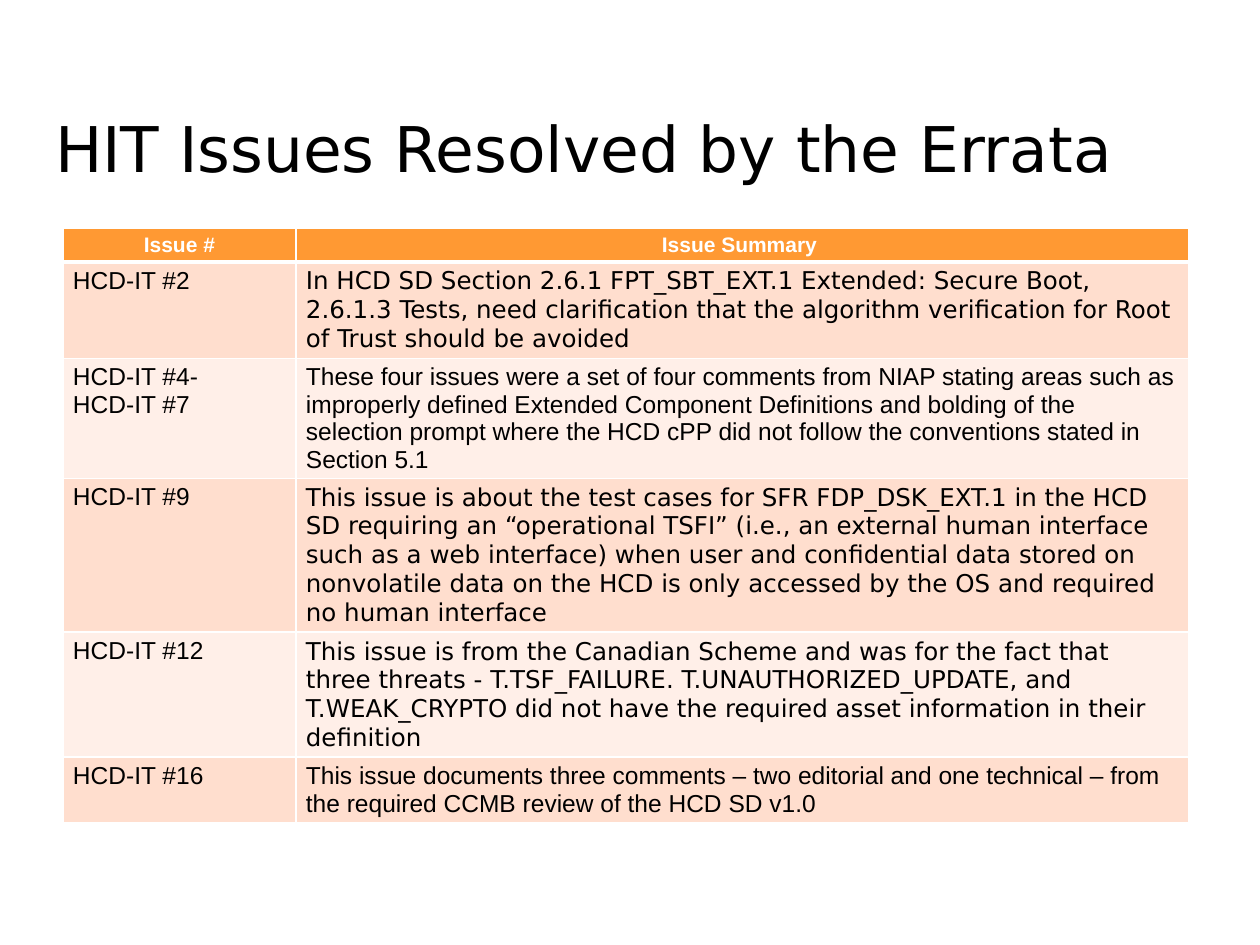
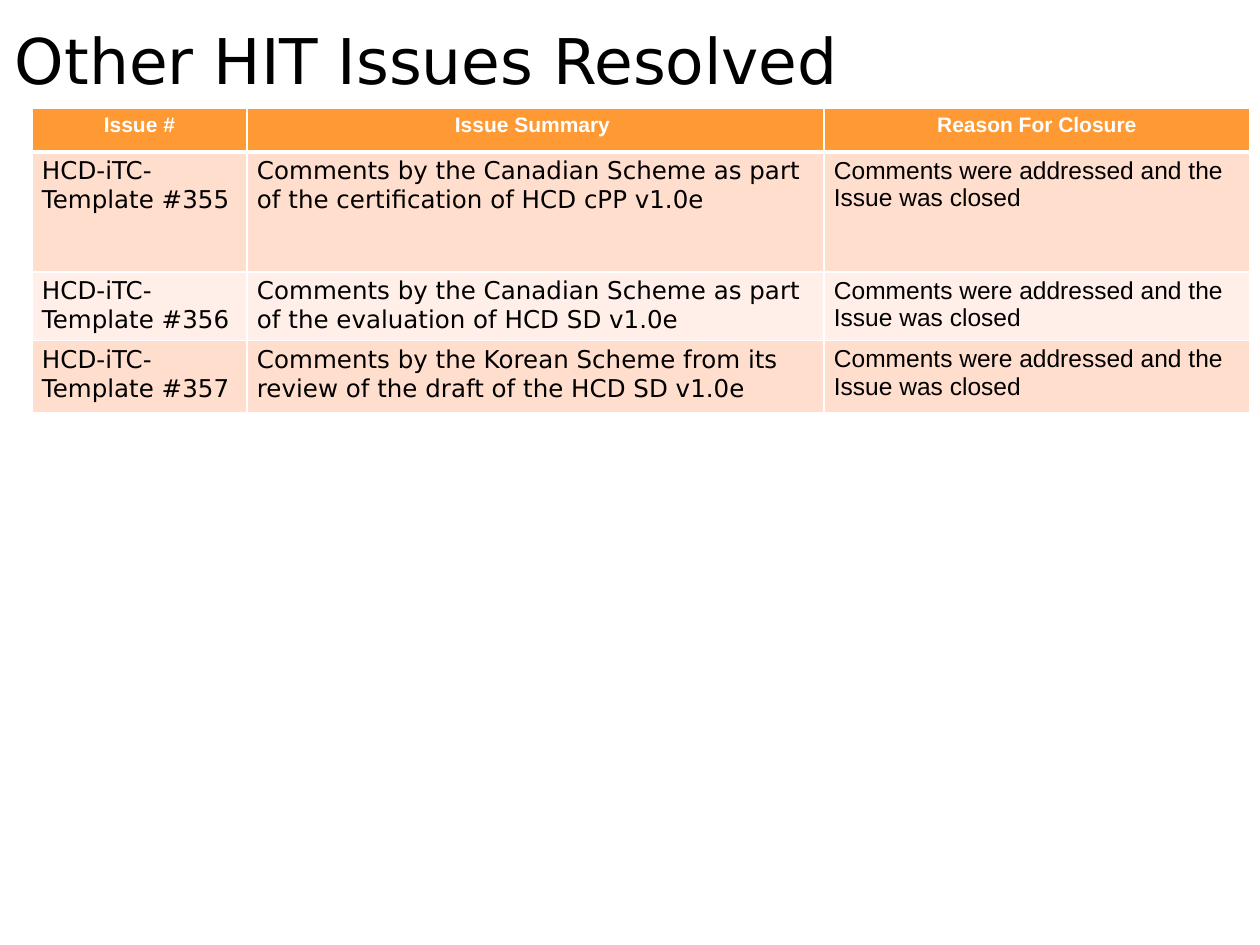
import pptx
import pptx.dml.color
import pptx.enum.text
import pptx.oxml.ns
import pptx.util
from lxml import etree

PX = 914400 // 126  # one px in EMU
SANS, ARIAL = "DejaVu Sans", "Arial"
BLACK, WHITE = "000000", "FFFFFF"
HEADER, BANDS = "FF9933", ("FFDECE", "FFEFE8")


def px(n):
    return pptx.util.Emu(n * PX)


def color(hex_text):
    return pptx.dml.color.RGBColor.from_string(hex_text)


def write(tf, text, size=14, font=ARIAL, fill=BLACK, bold=False, align="LEFT"):
    for i, line in enumerate(text.split("\n")):
        p = tf.add_paragraph() if i else tf.paragraphs[0]
        p.alignment = getattr(pptx.enum.text.PP_ALIGN, align)
        r = p.add_run()
        r.text = line
        r.font.size = pptx.util.Pt(size)
        r.font.name = font
        r.font.bold = bold
        r.font.color.rgb = color(fill)


class Deck:
    def __init__(self):
        self.prs = pptx.Presentation()
        self.prs.slide_width = pptx.util.Inches(10)
        self.prs.slide_height = pptx.util.Inches(7.5)
        self.s = None

    def slide(self):
        self.s = self.prs.slides.add_slide(self.prs.slide_layouts[6])

    def title(self, text, x, y, w, h=105):
        tf = self.s.shapes.add_textbox(px(x), px(y), px(w), px(h)).text_frame
        tf.word_wrap = True
        tf.vertical_anchor = pptx.enum.text.MSO_ANCHOR.BOTTOM
        tf.margin_left, tf.margin_right = px(13), px(13)
        tf.margin_top = tf.margin_bottom = px(8)
        write(tf, text, size=36, font=SANS)

    def borders(self, cell, **widths):
        # Border elements go before the fill, in schema order
        pr = cell._tc.get_or_add_tcPr()
        for i, side in enumerate("LRTB"):
            ln = etree.Element(pptx.oxml.ns.qn("a:ln" + side),
                               w=str(pptx.util.Pt(widths.get(side, 1))))
            solid = etree.SubElement(ln, pptx.oxml.ns.qn("a:solidFill"))
            etree.SubElement(solid, pptx.oxml.ns.qn("a:srgbClr"), val=WHITE)
            pr.insert(i, ln)

    def table(self, x, y, cols, heights, header, rows):
        """Each body cell is a (text, font) pair."""
        tbl = self.s.shapes.add_table(len(heights), len(cols), px(x), px(y),
                                      px(sum(cols)), px(sum(heights))).table
        for col, w in zip(tbl.columns, cols):
            col.width = px(w)
        for row, h in zip(tbl.rows, heights):
            row.height = px(h)
        for j, text in enumerate(header):
            cell = self.cell(tbl, 0, j, HEADER, B=3)
            write(cell.text_frame, text, size=12, fill=WHITE, bold=True, align="CENTER")
        for i, row in enumerate(rows, 1):
            for j, (text, font) in enumerate(row):
                cell = self.cell(tbl, i, j, BANDS[(i - 1) % 2], T=3 if i == 1 else 1)
                write(cell.text_frame, text, font=font)

    def cell(self, tbl, i, j, fill, **widths):
        cell = tbl.cell(i, j)
        cell.margin_left = cell.margin_right = px(10)
        cell.margin_top = cell.margin_bottom = px(5)
        cell.fill.solid()
        cell.fill.fore_color.rgb = color(fill)
        self.borders(cell, **widths)
        return cell


def main():
    deck = Deck()

    # Issues resolved by the errata
    errata = [
        ("HCD-IT #2", "In HCD SD Section 2.6.1 FPT_SBT_EXT.1 Extended: Secure Boot, 2.6.1.3 "
         "Tests, need clarification that the algorithm verification for Root of Trust "
         "should be avoided", SANS),
        ("HCD-IT #4-\nHCD-IT #7", "These four issues were a set of four comments from NIAP "
         "stating areas such as improperly defined Extended Component Definitions and "
         "bolding of the selection prompt where the HCD cPP did not follow the conventions "
         "stated in Section 5.1", ARIAL),
        ("HCD-IT #9", "This issue is about the test cases for SFR FDP_DSK_EXT.1 in the HCD SD "
         "requiring an “operational TSFI” (i.e., an external human interface such as a web "
         "interface) when user and confidential data stored on nonvolatile data on the HCD "
         "is only accessed by the OS and required no human interface", SANS),
        ("HCD-IT #12", "This issue is from the Canadian Scheme and was for the fact that three "
         "threats - T.TSF_FAILURE. T.UNAUTHORIZED_UPDATE, and T.WEAK_CRYPTO did not have the "
         "required asset information in their definition", SANS),
        ("HCD-IT #16", "This issue documents three comments – two editorial and one technical "
         "– from the required CCMB review of the HCD SD v1.0", ARIAL),
    ]
    header = ["Issue #", "Issue Summary "]
    deck.slide()
    deck.table(63, 228, [233, 893], [34, 96, 120, 153, 125, 65], header,
               [[(issue, ARIAL), (summary, font)] for issue, summary, font in errata])
    deck.title("HIT Issues Resolved by the Errata", 42, 88, 1218)

    # Other issues, with the reason for closure
    others = [
        (355, "Canadian Scheme as part of the certification of HCD cPP v1.0e"),
        (356, "Canadian Scheme as part of the evaluation of HCD SD v1.0e"),
        (357, "Korean Scheme from its review of the draft of the HCD SD v1.0e"),
    ]
    reason = "Comments were addressed and the Issue was closed"
    deck.slide()
    deck.table(32, 108, [215, 577, 426], [44, 120, 67, 72], header + ["Reason For Closure"],
               [[(f"HCD-iTC-Template #{number}", SANS), (f"Comments by the {source}", SANS),
                 (reason, ARIAL)] for number, source in others])
    deck.title("Other HIT Issues Resolved", 2, 0, 971)

    deck.prs.save("out.pptx")


if __name__ == "__main__":
    main()
